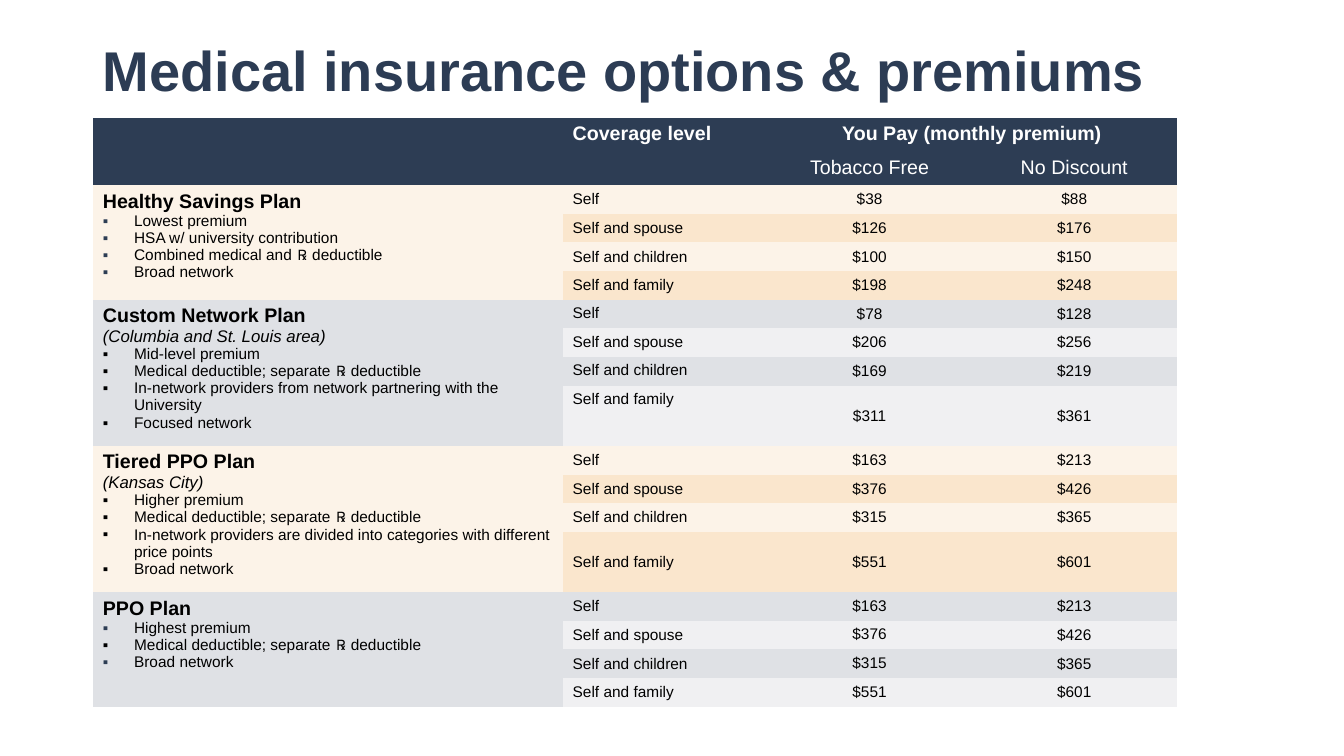
from lxml import etree
from pptx import Presentation
from pptx import util as u
from pptx.dml.color import RGBColor
from pptx.enum import text
from pptx.oxml import ns

NAVY = RGBColor(0x2D, 0x3D, 0x54)
INK = RGBColor(0x2C, 0x3C, 0x54)
WHITE = RGBColor(0xFF, 0xFF, 0xFF)
BLACK = RGBColor(0, 0, 0)
CREAM = RGBColor(0xFC, 0xF3, 0xE8)
PEACH = RGBColor(0xFA, 0xE6, 0xCD)
GREY = RGBColor(0xDF, 0xE1, 0xE5)
PALE = RGBColor(0xF0, 0xF0, 0xF2)

LEFT, MID = text.PP_ALIGN.LEFT, text.PP_ALIGN.CENTER
PX = 9144
BARE = "{2D5ABB26-0587-4C30-8999-92F81FD0307C}"
LEVELS = ["Self", "Self and spouse", "Self and children", "Self and family"]
BANDS = [(CREAM, PEACH), (GREY, PALE)]
TOPS = {(1, 1), (3, 2)}
PLANS = [
    ("Healthy Savings Plan", None,
     [("Lowest premium", NAVY), ("HSA w/ university contribution", NAVY),
      ("Combined medical and ℞ deductible", NAVY), ("Broad network", NAVY)],
     [(38, 88), (126, 176), (100, 150), (198, 248)]),
    ("Custom Network Plan", "(Columbia and St. Louis area)",
     [("Mid-level premium", None), ("Medical deductible; separate ℞ deductible", None),
      ("In-network providers from network partnering with the University", None),
      ("Focused network", None)],
     [(78, 128), (206, 256), (169, 219), (311, 361)]),
    ("Tiered PPO Plan", "(Kansas City)",
     [("Higher premium", None), ("Medical deductible; separate ℞ deductible", None),
      ("In-network providers are divided into categories with different price points", None),
      ("Broad network", None)],
     [(163, 213), (376, 426), (315, 365), (551, 601)]),
    ("PPO Plan", None,
     [("Highest premium", NAVY), ("Medical deductible; separate ℞ deductible", None),
      ("Broad network", NAVY)],
     [(163, 213), (376, 426), (315, 365), (551, 601)]),
]


class Deck:
    """Holds the font, the scale and the current slide."""

    def __init__(self, wide, high, face):
        self.face = face
        self.prs = Presentation()
        self.prs.slide_width, self.prs.slide_height = self.emu(wide), self.emu(high)
        self.slide = self.prs.slides.add_slide(self.prs.slide_layouts[6])

    def emu(self, px):
        return u.Emu(px * PX)

    def label(self, para, words, size, hue=BLACK, align=LEFT, **form):
        para.alignment = align
        run = para.add_run()
        run.text = words
        run.font.color.rgb = hue
        form = {"name": self.face, "size": u.Pt(size), "bold": False, **form}
        for key, val in form.items():
            setattr(run.font, key, val)

    def bullet(self, para, hue):
        props = para._p.get_or_add_pPr()
        props.set("marL", str(self.emu(31)))
        props.set("indent", str(self.emu(-31)))
        if hue is not None:
            tint = etree.SubElement(props, ns.qn("a:buClr"))
            etree.SubElement(tint, ns.qn("a:srgbClr"), val=str(hue))
        etree.SubElement(props, ns.qn("a:buFont"), typeface=self.face)
        etree.SubElement(props, ns.qn("a:buChar"), char="▪")

    def title(self, words, *box):
        frame = self.slide.shapes.add_textbox(*map(self.emu, box)).text_frame
        frame.word_wrap = True
        frame.vertical_anchor = text.MSO_ANCHOR.MIDDLE
        frame.paragraphs[0].line_spacing = 0.9
        self.label(frame.paragraphs[0], words, 40, INK, bold=True)

    def table(self, left, top, cols, rows):
        box = map(self.emu, (left, top, sum(cols), sum(rows)))
        grid = self.slide.shapes.add_table(len(rows), len(cols), *box).table
        grid._tbl.tblPr.find(ns.qn("a:tableStyleId")).text = BARE
        grid.first_row = grid.horz_banding = False
        for col, px in zip(grid.columns, cols):
            col.width = self.emu(px)
        for row, px in zip(grid.rows, rows):
            row.height = self.emu(px)
        return grid

    def cell(self, cell, fill, words="", size=11, mid=False, **form):
        cell.fill.solid()
        cell.fill.fore_color.rgb = fill
        if mid:
            cell.vertical_anchor = text.MSO_ANCHOR.MIDDLE
        para = cell.text_frame.paragraphs[0]
        if words:
            self.label(para, words, size, **form)
        else:
            etree.SubElement(para._p, ns.qn("a:endParaRPr"), sz=str(size * 100))

    def head(self, grid):
        names = [["", "Coverage level", "You Pay (monthly premium)", ""],
                 ["", "", "Tobacco Free", "No Discount"]]
        for r, line in enumerate(names):
            for c, words in enumerate(line):
                self.cell(grid.cell(r, c), NAVY, words, 14, hue=WHITE,
                          align=MID if c > 1 else LEFT, bold=r == 0)
        grid.cell(0, 2).merge(grid.cell(0, 3))

    def plan(self, grid, num, name, place, perks, costs):
        row, bands = 2 + num * len(LEVELS), BANDS[num % 2]
        lead = grid.cell(row, 0)
        lead.merge(grid.cell(row + len(LEVELS) - 1, 0))
        self.cell(lead, bands[0], name, 14, bold=True)
        if place:
            self.label(lead.text_frame.add_paragraph(), place, 12, italic=True)
        for words, hue in perks:
            para = lead.text_frame.add_paragraph()
            self.bullet(para, hue)
            self.label(para, words, 11)
        for r, (level, pair) in enumerate(zip(LEVELS, costs)):
            for c, words in enumerate([level, *(f"${cost}" for cost in pair)], 1):
                self.cell(grid.cell(row + r, c), bands[r % 2], words,
                          mid=(num, c) not in TOPS, align=MID if c > 1 else LEFT)


def main():
    deck = Deck(1333, 750, "Arial")
    deck.title("Medical insurance options & premiums", 92, 40, 1150, 66)
    short, tall = [23] * 4, [23] * 3 + [49]
    grid = deck.table(92, 117, [466, 203, 203, 203], [27] * 2 + short + tall * 2 + short)
    deck.head(grid)
    for num, plan in enumerate(PLANS):
        deck.plan(grid, num, *plan)
    deck.prs.save("out.pptx")


if __name__ == "__main__":
    main()
